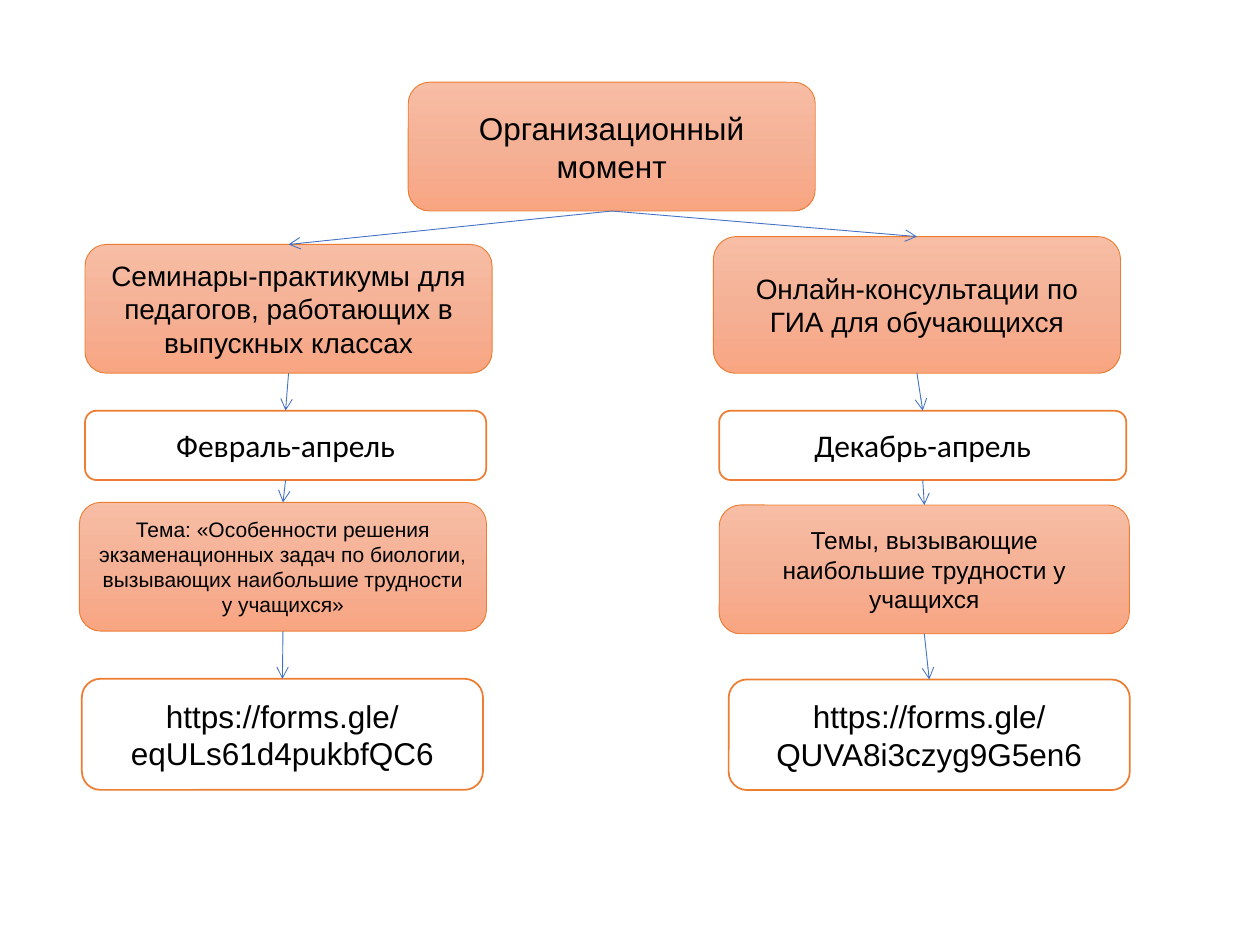
from copy import deepcopy

from lxml import etree
from pptx import Presentation
from pptx import util as u
from pptx.dml import color
from pptx.enum import shapes, text
from pptx.oxml import ns

COLORS = {"border": "ED7D31", "arrow": "4472C4", "text": "000000", "plain": "FFFFFF"}
GRADIENT = [(0, "F7BDA5"), (0.5, "F5B196"), (1, "F8A582")]

# Content: wording, (left, top, width, height) in points, format
ROOT = ("Организационный момент", (233.3, 47, 232.6, 73.6), {})
BRANCHES = [
    [
        ("Семинары-практикумы для педагогов, работающих в выпускных классах",
         (48.6, 139.7, 232.6, 73.6), {"size": 16}),
        ("Февраль-апрель", (48.6, 234.7, 229.2, 39.6), {"font": "Calibri", "filled": False}),
        ("Тема: «Особенности решения экзаменационных задач по биологии, "
         "вызывающих наибольшие трудности у учащихся»",
         (45.4, 287.1, 232.6, 73.6), {"size": 12}),
        ("https://forms.gle/eqULs61d4pukbfQC6", (46.8, 387.9, 229.2, 63.5), {"filled": False}),
    ],
    [
        ("Онлайн-консультации по ГИА для обучающихся",
         (407.7, 135.2, 232.6, 78.1), {"size": 16}),
        ("Декабрь-апрель", (411, 234.7, 232.6, 39.6), {"font": "Calibri", "filled": False}),
        ("Темы, вызывающие наибольшие трудности у учащихся",
         (411, 288.6, 234.4, 73.6), {"size": 14}),
        ("https://forms.gle/QUVA8i3czyg9G5en6", (416.4, 388.3, 229.2, 63.2), {"filled": False}),
    ],
]
TOP, BOTTOM = 0, 2  # connection sites of a rounded rectangle


def rgb(value):
    return color.RGBColor.from_string(value)


def fill_gradient(box):
    box.fill.gradient()
    box.fill.gradient_angle = 270  # counter-clockwise: runs top to bottom
    stop_list = box._element.spPr.find(".//" + ns.qn("a:gsLst"))
    stop_list.append(deepcopy(stop_list[-1]))
    for stop, (position, value) in zip(box.fill.gradient_stops, GRADIENT):
        stop.position = position
        stop.color.rgb = rgb(value)


def add_box(page, wording, place, size=18, font="Arial", filled=True):
    box = page.shapes.add_shape(shapes.MSO_SHAPE.ROUNDED_RECTANGLE, *map(u.Pt, place))
    box.shadow.inherit = False
    if filled:
        fill_gradient(box)
    else:
        box.fill.solid()
        box.fill.fore_color.rgb = rgb(COLORS["plain"])
    box.line.color.rgb = rgb(COLORS["border"])
    box.line.width = u.Pt(0.5 if filled else 1)

    frame = box.text_frame
    frame.word_wrap = True
    frame.vertical_anchor = text.MSO_ANCHOR.MIDDLE
    para = frame.paragraphs[0]
    para.alignment = text.PP_ALIGN.CENTER
    span = para.add_run()
    span.text = wording
    span.font.size = u.Pt(size)
    span.font.name = font
    span.font.color.rgb = rgb(COLORS["text"])
    return box


def add_arrow(page, upper, lower):
    arrow = page.shapes.add_connector(shapes.MSO_CONNECTOR.STRAIGHT, 0, 0, 0, 0)
    arrow.begin_connect(upper, BOTTOM)
    arrow.end_connect(lower, TOP)
    arrow.line.color.rgb = rgb(COLORS["arrow"])
    arrow.line.width = u.Pt(0.5)
    etree.SubElement(arrow.line._get_or_add_ln(), ns.qn("a:tailEnd"), type="arrow")
    etree.SubElement(arrow._element.spPr, ns.qn("a:effectLst"))


def main():
    deck = Presentation()
    deck.slide_width, deck.slide_height = u.Pt(720), u.Pt(540)
    page = deck.slides.add_slide(deck.slide_layouts[6])

    # Boxes
    def place_box(item):
        wording, place, style = item
        return add_box(page, wording, place, **style)

    root = place_box(ROOT)
    chains = [[root] + [place_box(item) for item in branch] for branch in BRANCHES]

    # Arrows from each box to the next one down its branch
    for chain in chains:
        for upper, lower in zip(chain, chain[1:]):
            add_arrow(page, upper, lower)

    deck.save("out.pptx")


if __name__ == "__main__":
    main()
